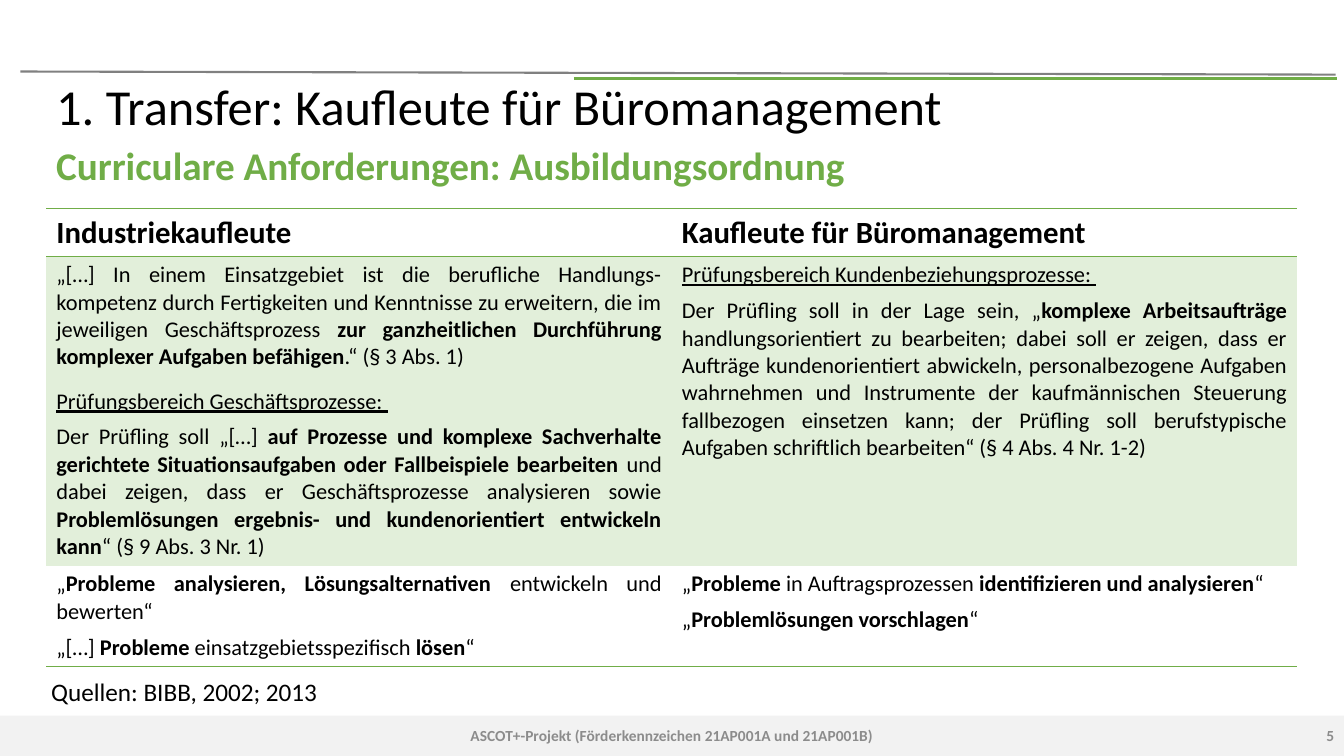
from lxml.etree import SubElement
from pptx import Presentation
from pptx.dml.color import RGBColor
from pptx.enum.shapes import MSO_CONNECTOR, MSO_SHAPE
from pptx.enum.text import MSO_ANCHOR, PP_ALIGN
from pptx.oxml import parse_xml
from pptx.oxml.ns import nsdecls, qn
from pptx.util import Pt

COLORS = {
    "green": "70AD47", "pale green": "E2EFDA", "gray": "808080",
    "footer": "F2F2F2", "footer text": "8C8C8C", "black": "000000",
}
PLAIN_TABLE_STYLE = "{2D5ABB26-0587-4C30-8999-92F81FD0307C}"


def color(name):
    return RGBColor.from_string(COLORS[name])


def write(paragraph, text, color_name, paragraph_format, font_format):
    """Fill a paragraph; parts between asterisks are bold."""
    for name, value in paragraph_format.items():
        setattr(paragraph, name, value)
    for index, part in enumerate(text.split("*")):
        if not part:
            continue
        run = paragraph.add_run()
        run.text = part
        values = {"name": "Calibri", "bold": index % 2 == 1, **font_format}
        for name, value in values.items():
            setattr(run.font, name, value)
        run.font.color.rgb = color(color_name)


presentation = Presentation()
presentation.slide_width, presentation.slide_height = Pt(960), Pt(540)
slide = presentation.slides.add_slide(presentation.slide_layouts[6])

# Footer band
footer = slide.shapes.add_shape(MSO_SHAPE.RECTANGLE, 0, Pt(511.2), Pt(960), Pt(28.8))
footer.shadow.inherit = False
footer.fill.solid()
footer.fill.fore_color.rgb = color("footer")
footer.line.fill.background()

# Header lines
for left, top, right, bottom, color_name, width in [
    (14.6, 51.1, 954, 53.3, "gray", 1.5),
    (410, 56, 954.7, 56, "green", 2.25),
]:
    line = slide.shapes.add_connector(
        MSO_CONNECTOR.STRAIGHT, Pt(left), Pt(top), Pt(right), Pt(bottom))
    line.line.color.rgb = color(color_name)
    line.line.width = Pt(width)
    SubElement(line.element.spPr, qn("a:effectLst"))

# Title, subtitle, source and footer texts
MIDDLE, TOP = MSO_ANCHOR.MIDDLE, MSO_ANCHOR.TOP
LEFT, CENTER, RIGHT = PP_ALIGN.LEFT, PP_ALIGN.CENTER, PP_ALIGN.RIGHT
for text, box, size, color_name, anchor, alignment, spacing, wrap in [
    ("1. Transfer: Kaufleute für Büromanagement",
     (33.1, 56.9, 878.4, 42.5), 36, "black", MIDDLE, LEFT, 0.9, True),
    ("*Curriculare Anforderungen: Ausbildungsordnung*",
     (33.1, 101.5, 885.6, 42), 28, "green", TOP, LEFT, 0.9, True),
    ("Quellen: BIBB, 2002; 2013",
     (29.5, 479.5, 206.6, 28.8), 18, "black", TOP, LEFT, 1.0, False),
    ("*ASCOT+-Projekt (Förderkennzeichen 21AP001A und 21AP001B)*",
     (318, 511.2, 324, 28.8), 11, "footer text", MIDDLE, CENTER, 1.0, True),
    ("*5*", (744, 511.2, 216, 28.8), 11, "footer text", MIDDLE, RIGHT, 1.0, True),
]:
    frame = slide.shapes.add_textbox(*[Pt(length) for length in box]).text_frame
    frame.word_wrap = wrap
    frame.vertical_anchor = anchor
    paragraph_format = {"alignment": alignment, "line_spacing": spacing}
    write(frame.paragraphs[0], text, color_name, paragraph_format, {"size": Pt(size)})

# Table: each cell is a list of (text, format changes)
JUSTIFIED = {"alignment": PP_ALIGN.JUSTIFY, "space_after": Pt(6)}
UNDERLINED = {"underline": True}
rows = [
    [
        [("*Industriekaufleute*", {}, {})],
        [("*Kaufleute für Büromanagement*", {}, {})],
    ],
    [
        [
            ("„[…] In einem Einsatzgebiet ist die berufliche Handlungs-kompetenz durch "
             "Fertigkeiten und Kenntnisse zu erweitern, die im jeweiligen Geschäftsprozess "
             "*zur ganzheitlichen Durchführung komplexer Aufgaben befähigen*.“ (§ 3 Abs. 1)",
             JUSTIFIED, {}),
            ("Prüfungsbereich Geschäftsprozesse: ",
             {**JUSTIFIED, "space_before": Pt(6)}, UNDERLINED),
            ("Der Prüfling soll „[…] *auf Prozesse und komplexe Sachverhalte gerichtete "
             "Situationsaufgaben oder Fallbeispiele bearbeiten *und dabei zeigen, dass er "
             "Geschäftsprozesse analysieren sowie *Problemlösungen ergebnis- und "
             "kundenorientiert entwickeln kann*“ (§ 9 Abs. 3 Nr. 1)", JUSTIFIED, {}),
        ],
        [
            ("Prüfungsbereich Kundenbeziehungsprozesse: ", JUSTIFIED, UNDERLINED),
            ("Der Prüfling soll in der Lage sein, „*komplexe Arbeitsaufträge "
             "*handlungsorientiert zu bearbeiten; dabei soll er zeigen, dass er Aufträge "
             "kundenorientiert abwickeln, personalbezogene Aufgaben wahrnehmen und "
             "Instrumente der kaufmännischen Steuerung fallbezogen einsetzen kann; der "
             "Prüfling soll berufstypische Aufgaben schriftlich bearbeiten“ "
             "(§ 4 Abs. 4 Nr. 1-2)", {"alignment": PP_ALIGN.JUSTIFY}, {}),
        ],
    ],
    [
        [
            ("„*Probleme analysieren, Lösungsalternativen *entwickeln und bewerten“",
             JUSTIFIED, {}),
            ("„[…] *Probleme* einsatzgebietsspezifisch *lösen*“",
             {"space_after": Pt(6)}, {}),
        ],
        [
            ("„*Probleme* in Auftragsprozessen *identifizieren und analysieren*“",
             JUSTIFIED, {}),
            ("„*Problemlösungen vorschlagen*“", JUSTIFIED, {}),
        ],
    ],
]
row_formats = [  # height, text size, anchor, fill, borders
    (34.2, 22, MIDDLE, None, ["lnT", "lnB"]),
    (220.8, 16, TOP, "pale green", []),
    (72, 16, TOP, None, ["lnB"]),
]
table = slide.shapes.add_table(
    3, 2, Pt(33.1), Pt(149), Pt(893.6), Pt(327)).table
table.horz_banding = False
table._tbl.tblPr.find(qn("a:tableStyleId")).text = PLAIN_TABLE_STYLE

for row, cells, (height, size, anchor, fill, borders) in zip(table.rows, rows, row_formats):
    row.height = Pt(height)
    for cell, paragraphs in zip(row.cells, cells):
        cell.vertical_anchor = anchor
        if fill:
            cell.fill.solid()
            cell.fill.fore_color.rgb = color(fill)
        else:
            cell.fill.background()
        for index, border in enumerate(borders):
            cell._tc.get_or_add_tcPr().insert(index, parse_xml(
                f'<a:{border} {nsdecls("a")} w="12700"><a:solidFill>'
                f'<a:srgbClr val="{COLORS["green"]}"/></a:solidFill></a:{border}>'))
        for index, (text, paragraph_format, font_format) in enumerate(paragraphs):
            frame = cell.text_frame
            paragraph = frame.add_paragraph() if index else frame.paragraphs[0]
            write(paragraph, text, "black", paragraph_format,
                  {"size": Pt(size), **font_format})

presentation.save("out.pptx")
